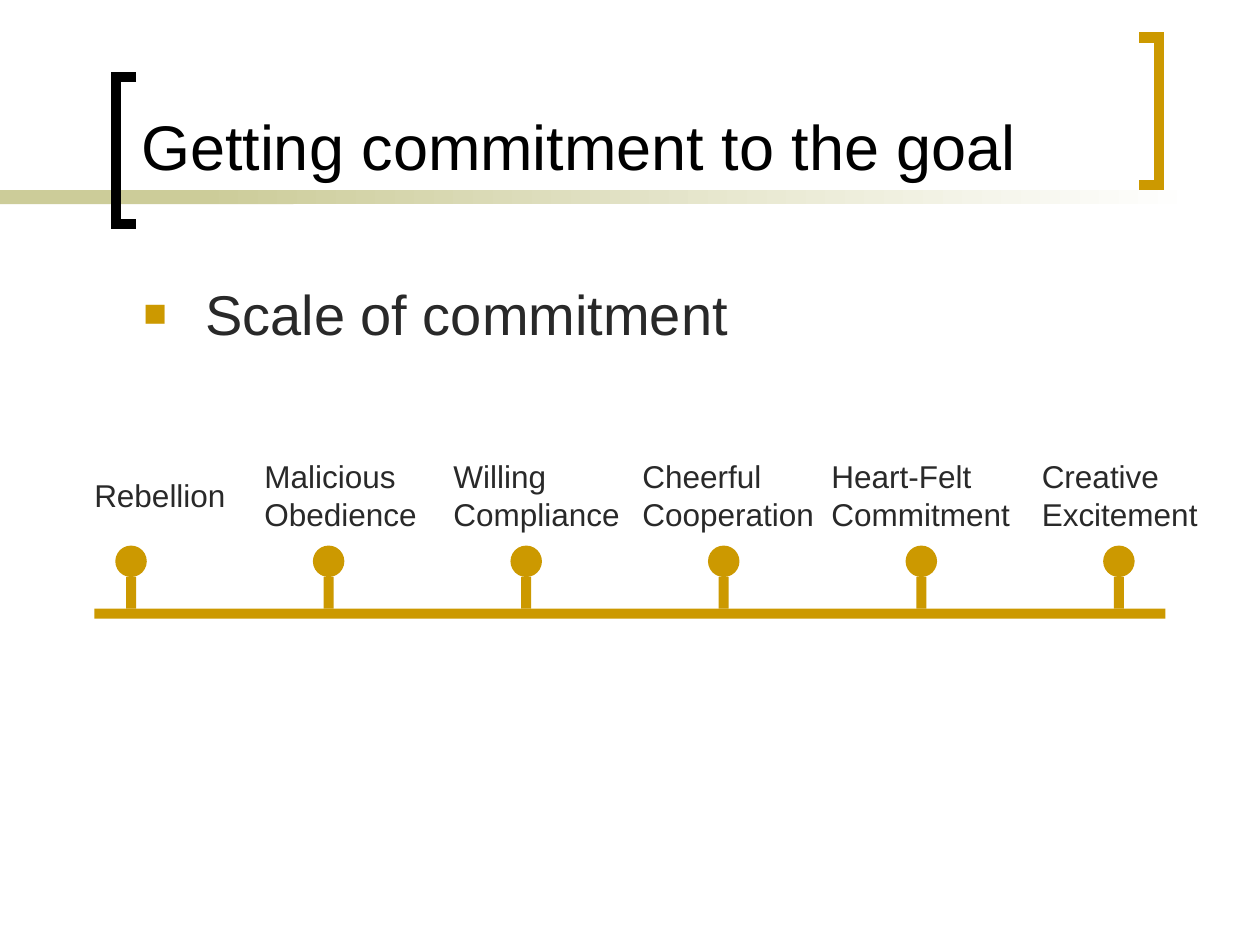
from dataclasses import dataclass
from typing import NamedTuple

import pptx
import pptx.dml.color
import pptx.enum.shapes
import pptx.enum.text
import pptx.oxml
import pptx.oxml.ns
import pptx.util
from pptx.util import Inches

RGB = pptx.dml.color.RGBColor
Shape = pptx.enum.shapes.MSO_SHAPE
Anchor = pptx.enum.text.MSO_ANCHOR
AutoSize = pptx.enum.text.MSO_AUTO_SIZE
Align = pptx.enum.text.PP_ALIGN


@dataclass(frozen=True)
class Theme:
    font: str = "Arial"
    ink: RGB = RGB(0x00, 0x00, 0x00)
    body: RGB = RGB(0x29, 0x29, 0x29)
    gold: RGB = RGB(0xCC, 0x99, 0x00)
    sand: RGB = RGB(0xCC, 0xCC, 0x99)
    white: RGB = RGB(0xFF, 0xFF, 0xFF)
    title_size: int = 36
    heading_size: int = 32
    label_size: int = 18
    bracket_width: int = 6


class Box(NamedTuple):
    left: float
    top: float
    width: float
    height: float

    def lengths(self) -> list:
        return [Inches(value) for value in self]


class Stage(NamedTuple):
    lines: tuple
    label: Box


THEME = Theme()
LABEL_TOP, LABEL_HEIGHT = 3.58, 0.7
STAGES = [
    Stage(("Rebellion",), Box(0.65, 3.73, 1.24, 0.4)),
    Stage(("Malicious", "Obedience"), Box(2, LABEL_TOP, 1.41, LABEL_HEIGHT)),
    Stage(("Willing", "Compliance"), Box(3.5, LABEL_TOP, 1.52, LABEL_HEIGHT)),
    Stage(("Cheerful", "Cooperation"), Box(5, LABEL_TOP, 1.56, LABEL_HEIGHT)),
    Stage(("Heart-Felt", "Commitment"), Box(6.5, LABEL_TOP, 1.62, LABEL_HEIGHT)),
    Stage(("Creative", "Excitement"), Box(8.17, LABEL_TOP, 1.44, LABEL_HEIGHT)),
]
FIRST_PIN, LAST_PIN = 1.04, 8.88
PIN_TOP, HEAD_SIZE, STEM_WIDTH, STEM_HEIGHT = 4.33, 0.25, 0.08, 0.25


def apply_format(target, values: dict) -> None:
    for name, value in values.items():
        setattr(target, name, value)


def write_lines(frame, lines: tuple, size: int, color: RGB, frame_format: dict) -> None:
    apply_format(frame, frame_format)
    for index, line in enumerate(lines):
        paragraph = frame.add_paragraph() if index else frame.paragraphs[0]
        paragraph.alignment = Align.LEFT
        run = paragraph.add_run()
        run.text = line
        apply_format(run.font, {"name": THEME.font, "size": pptx.util.Pt(size)})
        run.font.color.rgb = color


def add_solid(shapes, kind, box: Box, color: RGB):
    solid = shapes.add_shape(kind, *box.lengths())
    solid.shadow.inherit = False
    solid.fill.solid()
    solid.fill.fore_color.rgb = color
    solid.line.fill.background()
    return solid


def add_fading_bar(shapes, box: Box) -> None:
    bar = add_solid(shapes, Shape.RECTANGLE, box, THEME.sand)
    bar.fill.gradient()
    bar.fill.gradient_angle = 0
    for stop, color in zip(bar.fill.gradient_stops, (THEME.sand, THEME.white)):
        stop.color.rgb = color


def add_bracket(shapes, tip: float, spine: float, top: float, color: RGB) -> None:
    """Draw a square bracket whose arms reach from the spine to the tip."""
    bottom = top + 1.17
    corners = [(spine, top), (spine, bottom), (tip, bottom)]
    builder = shapes.build_freeform(Inches(tip), Inches(top))
    builder.add_line_segments([(Inches(x), Inches(y)) for x, y in corners], close=False)
    bracket = builder.convert_to_shape()
    bracket.shadow.inherit = False
    bracket.fill.background()
    bracket.line.color.rgb = color
    bracket.line.width = pptx.util.Pt(THEME.bracket_width)
    outline = bracket.element.spPr.find(pptx.oxml.ns.qn("a:ln"))
    outline.append(pptx.oxml.parse_xml(
        f'<a:miter {pptx.oxml.ns.nsdecls("a")} lim="800000"/>'))


def add_title(slide) -> None:
    title = slide.shapes.title
    apply_format(title, dict(zip(Box._fields, Box(1.02, 0.33, 7.83, 1.17).lengths())))
    write_lines(title.text_frame, ("Getting commitment to the goal",),
                THEME.title_size, THEME.ink,
                {"vertical_anchor": Anchor.BOTTOM, "word_wrap": True,
                 "auto_size": AutoSize.NONE})


def add_heading(shapes) -> None:
    heading = shapes.add_textbox(*Box(1.04, 2.17, 8.38, 4.5).lengths()).text_frame
    write_lines(heading, ("Scale of commitment",), THEME.heading_size, THEME.body,
                {"word_wrap": True})
    paragraph = heading.paragraphs[0]
    paragraph.space_before = pptx.util.Pt(6)
    properties = paragraph._p.get_or_add_pPr()
    properties.set("marL", str(Inches(0.49)))
    properties.set("indent", str(Inches(-0.49)))
    namespace = pptx.oxml.ns.nsdecls("a")
    for bullet_part in (
        f'<a:buClr {namespace}><a:srgbClr val="{THEME.gold}"/></a:buClr>',
        f'<a:buSzPct {namespace} val="70000"/>',
        f'<a:buFont {namespace} typeface="{THEME.font}"/>',
        f'<a:buChar {namespace} char="■"/>',
    ):
        properties.append(pptx.oxml.parse_xml(bullet_part))


def add_pin(shapes, center: float) -> None:
    pin = shapes.add_group_shape().shapes
    add_solid(pin, Shape.OVAL,
              Box(center - HEAD_SIZE / 2, PIN_TOP, HEAD_SIZE, HEAD_SIZE), THEME.gold)
    add_solid(pin, Shape.RECTANGLE,
              Box(center - STEM_WIDTH / 2, PIN_TOP + HEAD_SIZE, STEM_WIDTH, STEM_HEIGHT),
              THEME.gold)


def add_scale(shapes) -> None:
    add_solid(shapes, Shape.RECTANGLE, Box(0.75, 4.83, 8.5, 0.08), THEME.gold)
    pitch = (LAST_PIN - FIRST_PIN) / (len(STAGES) - 1)
    for index, stage in enumerate(STAGES):
        add_pin(shapes, FIRST_PIN + index * pitch)
        label = shapes.add_textbox(*stage.label.lengths())
        write_lines(label.text_frame, stage.lines, THEME.label_size, THEME.body,
                    {"word_wrap": False, "auto_size": AutoSize.SHAPE_TO_FIT_TEXT})


def main() -> None:
    deck = pptx.Presentation()
    apply_format(deck, {"slide_width": Inches(10), "slide_height": Inches(7.5)})
    slide = deck.slides.add_slide(deck.slide_layouts[5])
    shapes = slide.shapes
    add_solid(shapes, Shape.RECTANGLE, Box(0, 1.51, 2.33, 0.11), THEME.sand)
    add_fading_bar(shapes, Box(1.58, 1.51, 7.92, 0.11))
    add_bracket(shapes, tip=1.08, spine=0.92, top=0.61, color=THEME.ink)
    add_bracket(shapes, tip=9.04, spine=9.2, top=0.3, color=THEME.gold)
    add_title(slide)
    add_heading(shapes)
    add_scale(shapes)
    deck.save("out.pptx")


if __name__ == "__main__":
    main()
